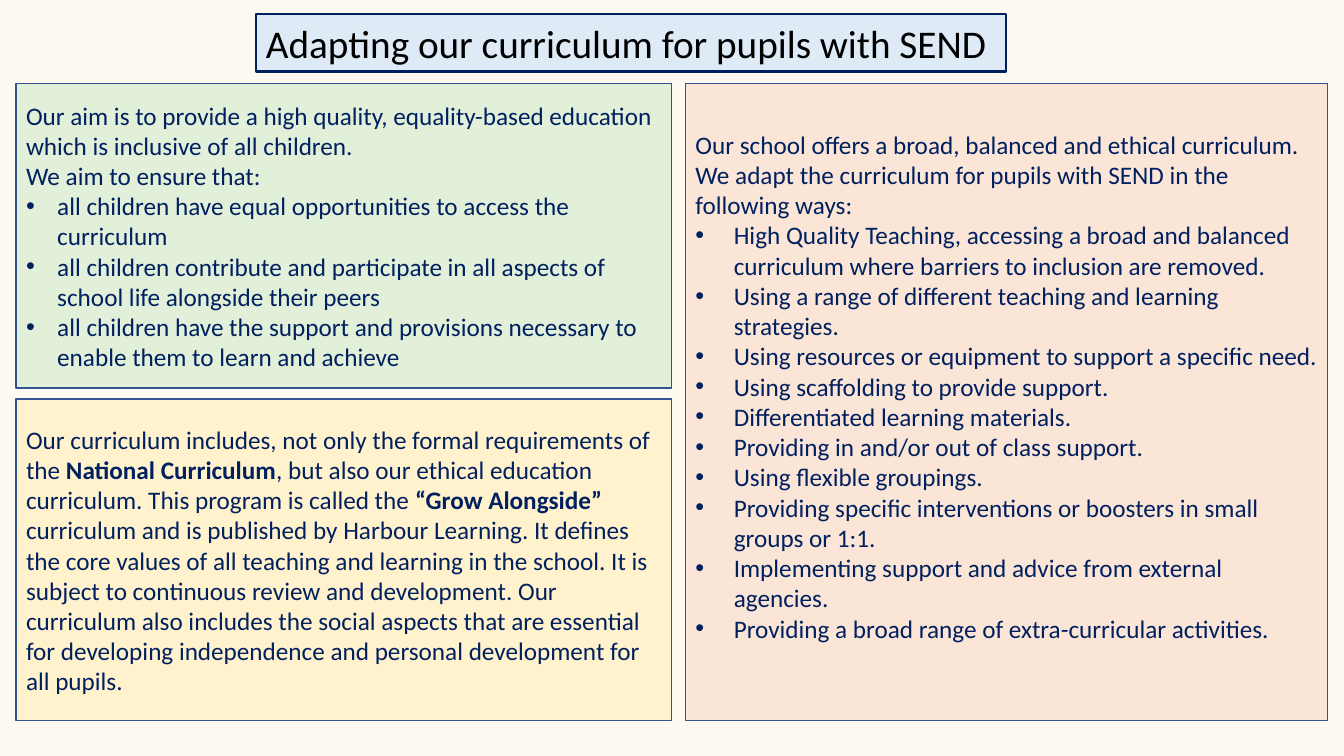
import pptx
import pptx.dml.color
import pptx.enum.shapes
import pptx.enum.text
import pptx.oxml.ns
import pptx.util
from lxml import etree

RGBColor = pptx.dml.color.RGBColor
Inches = pptx.util.Inches
CREAM = RGBColor(0xFF, 0xFA, 0xF1)
GREEN = RGBColor(0xE2, 0xF0, 0xD9)
PEACH = RGBColor(0xFB, 0xE5, 0xD6)
YELLOW = RGBColor(0xFF, 0xF2, 0xCC)
PALE_BLUE = RGBColor(0xDE, 0xEB, 0xF7)
BORDER = RGBColor(0x32, 0x54, 0x91)
NAVY = RGBColor(0x00, 0x20, 0x60)
BLACK = RGBColor(0x00, 0x00, 0x00)

LEFT_COLUMN, RIGHT_COLUMN = (0.16, 6.5), (6.8, 6.37)
TOP_ROW, BOTTOM_ROW = (0.83, 3.02), (3.96, 3.19)
BOTH_ROWS = (TOP_ROW[0], sum(BOTTOM_ROW) - TOP_ROW[0])

deck = pptx.Presentation()
deck.slide_width, deck.slide_height = Inches(13.33), Inches(7.5)
page = deck.slides.add_slide(deck.slide_layouts[6])
page.background.fill.solid()
page.background.fill.fore_color.rgb = CREAM


def add_panel(column, row, fill, border, weight):
    (left, width), (top, height) = column, row
    box = page.shapes.add_shape(
        pptx.enum.shapes.MSO_SHAPE.RECTANGLE,
        Inches(left), Inches(top), Inches(width), Inches(height))
    box.shadow.inherit = False
    box.fill.solid()
    box.fill.fore_color.rgb = fill
    box.line.color.rgb = border
    box.line.width = pptx.util.Pt(weight)
    box.text_frame.word_wrap = True
    return box.text_frame


def add_span(para, text, size, color, bold=False):
    para.alignment = pptx.enum.text.PP_ALIGN.LEFT
    span = para.add_run()
    span.text = text
    span.font.name = "Calibri"
    span.font.size = pptx.util.Pt(size)
    span.font.color.rgb = color
    span.font.bold = bold


aims = (
    ["Our aim is to provide a high quality, equality-based education which is inclusive of all children.",
     "We aim to ensure that:"],
    ["all children have equal opportunities to access the curriculum",
     "all children contribute and participate in all aspects of school life alongside their peers",
     "all children have the support and provisions necessary to enable them to learn and achieve"])
adaptations = (
    ["Our school offers a broad, balanced and ethical curriculum. We adapt the curriculum for pupils with SEND in the following ways:"],
    ["High Quality Teaching, accessing a broad and balanced curriculum where barriers to inclusion are removed.",
     "Using a range of different teaching and learning strategies.",
     "Using resources or equipment to support a specific need.",
     "Using scaffolding to provide support.",
     "Differentiated learning materials.",
     "Providing in and/or out of class support.",
     "Using flexible groupings.",
     "Providing specific interventions or boosters in small groups or 1:1.",
     "Implementing support and advice from external agencies.",
     "Providing a broad range of extra-curricular activities."])
curriculum = [
    ("Our curriculum includes, not only the formal requirements of the ", False),
    ("National Curriculum", True),
    (", but also our ethical education curriculum. This program is called the ", False),
    ("“Grow Alongside” ", True),
    ("curriculum and is published by Harbour Learning. It defines the core values of all teaching and "
     "learning in the school. It is subject to continuous review and development. Our curriculum also "
     "includes the social aspects that are essential for developing independence and personal "
     "development for all pupils.", False)]

list_panels = [
    (LEFT_COLUMN, TOP_ROW, GREEN, aims, 0.31, 0.05),
    (RIGHT_COLUMN, BOTH_ROWS, PEACH, adaptations, 0.38, 0.37)]
for column, row, fill, (intro, points), indent, bottom_margin in list_panels:
    frame = add_panel(column, row, fill, BORDER, 1)
    frame.vertical_anchor = pptx.enum.text.MSO_ANCHOR.MIDDLE
    frame.margin_bottom = Inches(bottom_margin)
    for index, text in enumerate(intro + points):
        para = frame.add_paragraph() if index else frame.paragraphs[0]
        if index >= len(intro):
            properties = para._p.get_or_add_pPr()
            properties.set("marL", str(Inches(indent)))
            properties.set("indent", str(-Inches(indent)))
            for tag, key, value in [("a:buFont", "typeface", "Arial"), ("a:buChar", "char", "•")]:
                etree.SubElement(properties, pptx.oxml.ns.qn(tag)).set(key, value)
        add_span(para, text, 18, NAVY)

frame = add_panel(LEFT_COLUMN, BOTTOM_ROW, YELLOW, BORDER, 1)
frame.vertical_anchor = pptx.enum.text.MSO_ANCHOR.MIDDLE
for text, bold in curriculum:
    add_span(frame.paragraphs[0], text, 18, NAVY, bold)

title = add_panel((2.54, 7.44), (0.14, 0.57), PALE_BLUE, NAVY, 1.75)
title.vertical_anchor = pptx.enum.text.MSO_ANCHOR.TOP
title.auto_size = pptx.enum.text.MSO_AUTO_SIZE.SHAPE_TO_FIT_TEXT
add_span(title.paragraphs[0], "Adapting our curriculum for pupils with SEND", 28, BLACK)

deck.save("out.pptx")
